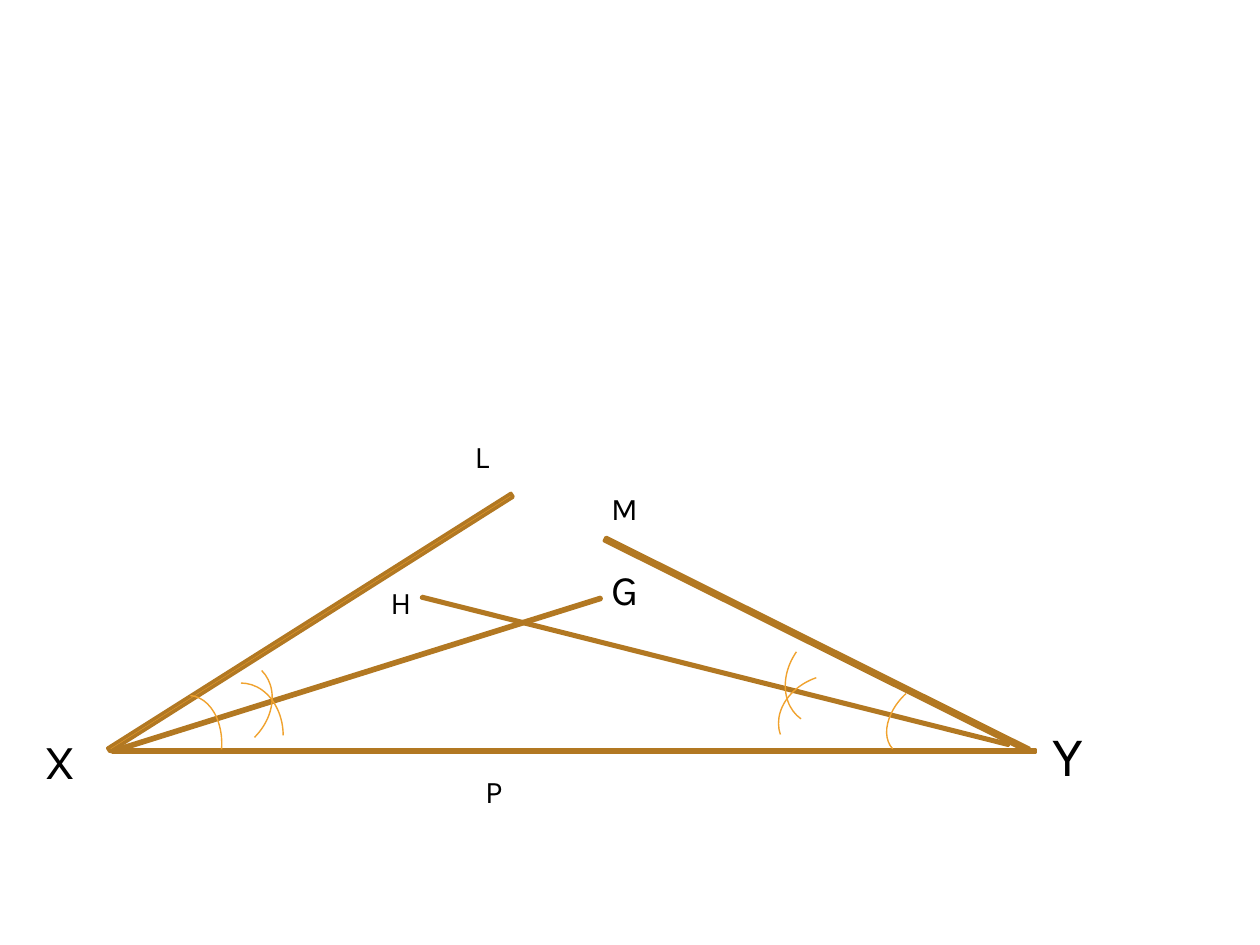
import pptx
import pptx.dml.color
import pptx.enum.shapes
import pptx.enum.text
import pptx.util
from pptx.util import Cm

COLORS = {"ray": "F0A22E", "ray_edge": "B27822", "arc": "F0A22E", "label": "000000"}
FONT = "Karla"
PRESETS = pptx.enum.shapes.MSO_SHAPE

ANGLE_X = {
    "rays": [
        (0.36, 4.99, 13.82, 0.18, 342.6),
        (0.64, 6.54, 12.27, 0.2, 0),
        (-0.28, 3.87, 13.08, 0.36, 327.7),
    ],
    "arcs": [
        (3.68, 4.71, 1.7, 2.11, 45),
        (4.01, 5.27, 1.7, 2.11, 0),
        (3.05, 5.52, 1.42, 2.06, 4.5),
    ],
    "points": [
        ("X", 0.64, 6.11, 1.47, 1.45, 28),
        ("G", 12.07, 2.73, 1.27, 1.27, 24),
        ("L", 9.32, 0.19, 1.07, 1.02, 18),
        ("P", 9.53, 6.94, 1.27, 1.02, 18),
    ],
}

ANGLE_Y = {
    "rays": [
        (0.12, 4.96, 16.59, 0.13, 14.1),
        (3.98, 4.33, 12.98, 0.33, 26.5),
        (3.53, 6.54, 13.08, 0.2, 0),
    ],
    "arcs": [
        (9.88, 4.91, 1.7, 2.11, 251.2),
        (9.9, 4.07, 1.7, 2.11, 214.9),
        (12.06, 4.99, 1.27, 1.91, 227.2),
    ],
    "points": [
        ("Y", 14.96, 5.9, 1.7, 1.63, 32),
        ("H", 1.62, 3.13, 0.84, 1.02, 18),
        ("M", 6.07, 1.23, 1.07, 1.02, 18),
    ],
}


def rgb(name):
    return pptx.dml.color.RGBColor.from_string(COLORS[name])


def add_stroke(slide, preset, box, rotation, edge, weight, fill=None):
    stroke = slide.shapes.add_shape(preset, *box)
    stroke.rotation = rotation
    stroke.shadow.inherit = False
    if fill:
        stroke.fill.solid()
        stroke.fill.fore_color.rgb = rgb(fill)
    else:
        stroke.fill.background()
    stroke.line.color.rgb = rgb(edge)
    stroke.line.width = pptx.util.Pt(weight)


def add_point(slide, box, letter, size):
    frame = slide.shapes.add_textbox(*box).text_frame
    frame.word_wrap = True
    frame.auto_size = pptx.enum.text.MSO_AUTO_SIZE.SHAPE_TO_FIT_TEXT
    frame.text = letter
    font = frame.paragraphs[0].runs[0].font
    font.name = FONT
    font.size = pptx.util.Pt(size)
    font.color.rgb = rgb("label")


def add_bisected_angle(slide, left, top, angle):
    def place(x, y, width, height):
        return left + Cm(x), top + Cm(y), Cm(width), Cm(height)

    for *box, rotation in angle["rays"]:
        add_stroke(slide, PRESETS.MATH_MINUS, place(*box), rotation, "ray_edge", 2, "ray")
    for *box, rotation in angle["arcs"]:
        add_stroke(slide, PRESETS.ARC, place(*box), rotation, "arc", 0.79)
    for letter, *box, size in angle["points"]:
        add_point(slide, place(*box), letter, size)


def main():
    deck = pptx.Presentation()
    deck.slide_width, deck.slide_height = Cm(25.4), Cm(19.05)
    slide = deck.slides.add_slide(deck.slide_layouts[6])
    add_bisected_angle(slide, Cm(6), Cm(8.5), ANGLE_Y)
    add_bisected_angle(slide, Cm(0), Cm(8.5), ANGLE_X)
    deck.save("out.pptx")


if __name__ == "__main__":
    main()
